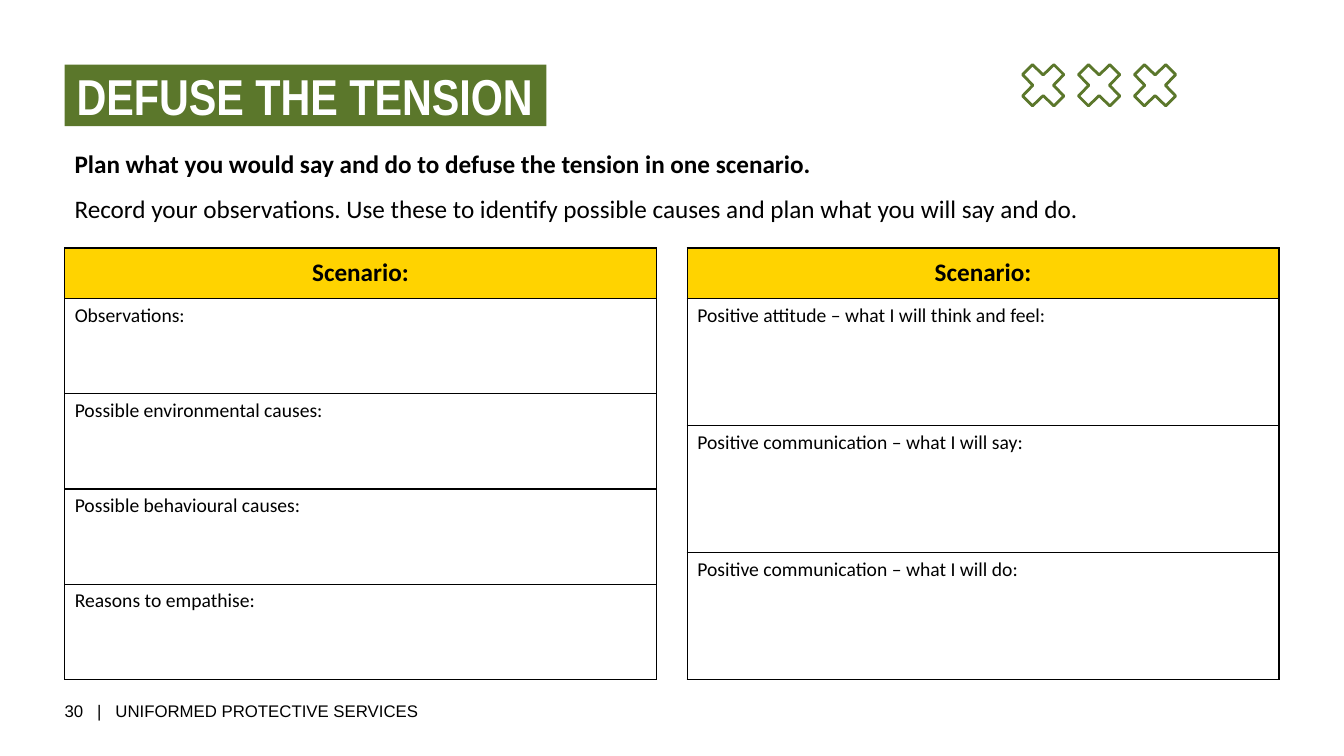
from dataclasses import dataclass

from lxml import etree
from pptx import Presentation
from pptx.dml.color import RGBColor
from pptx.enum.shapes import MSO_SHAPE
from pptx.enum.text import MSO_ANCHOR, MSO_AUTO_SIZE, PP_ALIGN
from pptx.oxml.ns import qn
from pptx.util import Cm, Pt

RECTANGLE = MSO_SHAPE.RECTANGLE
TOP, MIDDLE = MSO_ANCHOR.TOP, MSO_ANCHOR.MIDDLE
LEFT, CENTER = PP_ALIGN.LEFT, PP_ALIGN.CENTER
FIT_SHAPE = MSO_AUTO_SIZE.SHAPE_TO_FIT_TEXT

MARGIN = 1.63
TABLE_TOP = 6.25
TABLE_WIDTH = 14.91
TABLE_GAP = 0.78
HEADER_HEIGHT = 1.27
BODY_HEIGHT = 9.6

TABLES = [
    ["Observations:", "Possible environmental causes:",
     "Possible behavioural causes:", "Reasons to empathise:"],
    ["Positive attitude – what I will think and feel:",
     "Positive communication – what I will say:",
     "Positive communication – what I will do:"],
]


@dataclass(frozen=True)
class Theme:
    """Colours, fonts and sizes of the slide."""
    green: str = "5B772B"
    yellow: str = "FFD300"
    white: str = "FFFFFF"
    black: str = "000000"
    title_font: str = "Arial Narrow"
    body_font: str = "Calibri"
    footer_font: str = "Arial"
    title_size: int = 36
    lead_size: int = 18
    cell_size: int = 14
    footer_size: int = 12
    cross_line: float = 2
    border_line: float = 1
    space_after: int = 10


class WorksheetSlide:
    """Draws the elements of a worksheet slide in one theme."""

    def __init__(self, slide, theme):
        self.slide = slide
        self.theme = theme

    def format_paragraph(self, paragraph, font, size, color, bold=False, align=LEFT, after=0):
        paragraph.alignment = align
        paragraph.space_after = Pt(after)
        for run in paragraph.runs:
            run.font.name = font
            run.font.size = Pt(size)
            run.font.bold = bold
            run.font.color.rgb = RGBColor.from_string(color)

    def set_frame(self, frame, insets, anchor=TOP, wrap=True):
        frame.word_wrap = wrap
        frame.auto_size = FIT_SHAPE
        frame.vertical_anchor = anchor
        (frame.margin_left, frame.margin_top,
         frame.margin_right, frame.margin_bottom) = map(Cm, insets)

    def add_title(self, text):
        theme = self.theme
        shape = self.slide.shapes.add_shape(
            RECTANGLE, Cm(MARGIN), Cm(MARGIN), Cm(12.14), Cm(1.55))
        shape.shadow.inherit = False
        shape.fill.solid()
        shape.fill.fore_color.rgb = RGBColor.from_string(theme.green)
        shape.line.fill.background()
        self.set_frame(shape.text_frame, (0.3, 0, 0.2, 0), wrap=False)
        shape.text_frame.text = text
        self.format_paragraph(shape.text_frame.paragraphs[0], theme.title_font,
                              theme.title_size, theme.white, bold=True)

    def add_intro(self, lead, detail):
        theme = self.theme
        box = self.slide.shapes.add_textbox(Cm(MARGIN), Cm(3.5), Cm(29.54), Cm(2.39))
        frame = box.text_frame
        self.set_frame(frame, (0.25, 0.25, 0.25, 0.25))
        frame.text = f"{lead}\n{detail}"
        for paragraph, bold in zip(frame.paragraphs, (True, False)):
            self.format_paragraph(paragraph, theme.body_font, theme.lead_size,
                                  theme.black, bold, after=theme.space_after)

    def add_crosses(self, count, left_center, middle, step):
        arm, tip, notch = 0.27, 0.52, 0.26
        corner = [(arm, tip), (tip, arm), (notch, 0), (tip, -arm), (arm, -tip), (0, -notch)]
        outline = corner + [(-x, -y) for x, y in corner]
        builder = None
        for index in range(count):
            center = left_center + index * step
            points = [(Cm(center + x), Cm(middle + y)) for x, y in outline]
            if builder is None:
                builder = self.slide.shapes.build_freeform(*points[0])
            else:
                builder.move_to(*points[0])
            builder.add_line_segments(points[1:], close=True)
        shape = builder.convert_to_shape()
        shape.shadow.inherit = False
        shape.fill.background()
        shape.line.color.rgb = RGBColor.from_string(self.theme.green)
        shape.line.width = Pt(self.theme.cross_line)

    def add_borders(self, cell):
        properties = cell._tc.get_or_add_tcPr()
        for index, side in enumerate(("a:lnL", "a:lnR", "a:lnT", "a:lnB")):
            line = etree.Element(qn(side), w=str(Pt(self.theme.border_line)))
            fill = etree.SubElement(line, qn("a:solidFill"))
            etree.SubElement(fill, qn("a:srgbClr"), val=self.theme.black)
            properties.insert(index, line)

    def add_cell(self, cell, text, is_header):
        theme = self.theme
        cell.text = text
        cell.vertical_anchor = MIDDLE if is_header else TOP
        cell.fill.solid()
        cell.fill.fore_color.rgb = RGBColor.from_string(
            theme.yellow if is_header else theme.white)
        self.add_borders(cell)
        self.format_paragraph(
            cell.text_frame.paragraphs[0], theme.body_font,
            theme.lead_size if is_header else theme.cell_size, theme.black,
            bold=is_header, align=CENTER if is_header else LEFT,
            after=0 if is_header else theme.space_after)

    def add_scenario_table(self, left, prompts):
        texts = ["Scenario:"] + prompts
        table = self.slide.shapes.add_table(
            len(texts), 1, Cm(left), Cm(TABLE_TOP), Cm(TABLE_WIDTH),
            Cm(HEADER_HEIGHT + BODY_HEIGHT)).table
        table.first_row = False
        table.horz_banding = False
        for index, text in enumerate(texts):
            is_header = index == 0
            height = HEADER_HEIGHT if is_header else BODY_HEIGHT / len(prompts)
            table.rows[index].height = Cm(height)
            self.add_cell(table.cell(index, 0), text, is_header)

    def add_footer(self, parts, tab_stops):
        theme = self.theme
        box = self.slide.shapes.add_textbox(Cm(MARGIN), Cm(17.65), Cm(9.7), Cm(0.51))
        self.set_frame(box.text_frame, (0, 0, 0, 0), MIDDLE)
        paragraph = box.text_frame.paragraphs[0]
        paragraph.text = "\t".join(parts)
        tabs = etree.SubElement(paragraph._p.get_or_add_pPr(), qn("a:tabLst"))
        for stop in tab_stops:
            etree.SubElement(tabs, qn("a:tab"), pos=str(Cm(stop)), algn="l")
        self.format_paragraph(paragraph, theme.footer_font, theme.footer_size, theme.black)


def main():
    presentation = Presentation()
    presentation.slide_width, presentation.slide_height = Cm(33.87), Cm(19.05)
    blank_layout = presentation.slide_layouts[6]
    worksheet = WorksheetSlide(presentation.slides.add_slide(blank_layout), Theme())
    worksheet.add_footer(["30", "|", "UNIFORMED PROTECTIVE SERVICES"], [0.82, 1.28])
    worksheet.add_title("DEFUSE THE TENSION")
    worksheet.add_intro(
        "Plan what you would say and do to defuse the tension in one scenario.",
        "Record your observations. Use these to identify possible causes "
        "and plan what you will say and do.")
    worksheet.add_crosses(3, left_center=26.29, middle=2.15, step=1.41)
    for index, prompts in enumerate(TABLES):
        worksheet.add_scenario_table(MARGIN + index * (TABLE_WIDTH + TABLE_GAP), prompts)
    presentation.save("out.pptx")


if __name__ == "__main__":
    main()
